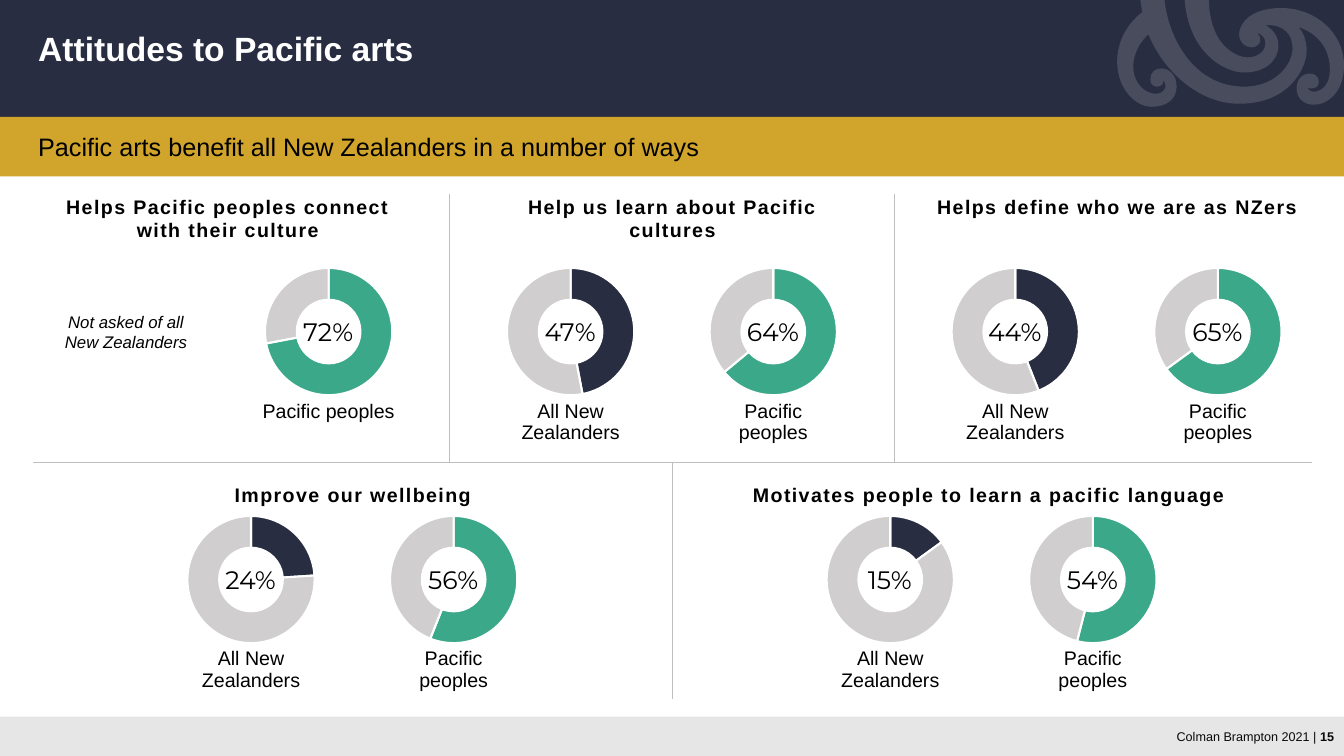
from lxml import etree
from pptx import Presentation
from pptx.chart.data import CategoryChartData
from pptx.dml.color import RGBColor
from pptx.enum.chart import XL_CHART_TYPE as ChartType
from pptx.enum.shapes import MSO_CONNECTOR as Connector, MSO_SHAPE as Shape
from pptx.enum.text import MSO_ANCHOR as Anchor, PP_ALIGN as Align
from pptx.oxml.ns import qn
from pptx.util import Inches, Pt

TITLE = "Attitudes to Pacific arts"
SUBTITLE = "Pacific arts benefit all New Zealanders in a number of ways"
NOT_ASKED = "Not asked of all\vNew Zealanders"
FOOTER = ("Colman Brampton 2021 | ", "15")
ALL, PACIFIC = "All New Zealanders", "Pacific peoples"

PANELS = [
    {"heading": "Helps Pacific peoples connect with their culture", "row": 0,
     "left": 0.33, "width": 3.86, "first": 3.26, "rings": [(PACIFIC, 72)]},
    {"heading": "Help us learn about Pacific cultures", "row": 0,
     "left": 4.74, "width": 3.86, "first": 5.66, "rings": [(ALL, 47), (PACIFIC, 64)]},
    {"heading": "Helps define who we are as NZers", "row": 0,
     "left": 9.15, "width": 3.86, "first": 10.07, "rings": [(ALL, 44), (PACIFIC, 65)]},
    {"heading": "Improve our wellbeing", "row": 1,
     "left": 1.57, "width": 3.86, "first": 2.49, "rings": [(ALL, 24), (PACIFIC, 56)]},
    {"heading": "Motivates people to learn a pacific language ", "row": 1,
     "left": 7.2, "width": 5.28, "first": 8.83, "rings": [(ALL, 15), (PACIFIC, 54)]},
]
ROWS = [{"heading": 1.88, "ring": 2.52}, {"heading": 4.74, "ring": 4.98}]
DIVIDERS = [(0.33, 4.59, 13.01, 4.59), (4.46, 1.92, 4.46, 4.59),
            (8.87, 1.92, 8.87, 4.59), (6.67, 4.59, 6.67, 6.93)]

SWIRL_START = (11.08, 0.61)
SWIRL = [
    (11.08, 0.89, 11.27, 1.06, 11.42, 1.06), (11.6, 1.06, 11.67, 0.96, 11.67, 0.86),
    (11.67, 0.74, 11.59, 0.68, 11.52, 0.68), (11.46, 0.68, 11.41, 0.71, 11.41, 0.79),
    (11.41, 0.86, 11.47, 0.86, 11.48, 0.86), (11.49, 0.86, 11.54, 0.85, 11.54, 0.8),
    (11.54, 0.8, 11.56, 0.82, 11.56, 0.85), (11.56, 0.87, 11.55, 0.93, 11.46, 0.93),
    (11.36, 0.93, 11.24, 0.83, 11.24, 0.66), (11.24, 0.47, 11.39, 0.34, 11.39, 0.34),
    (11.53, 0.69, 11.88, 1.03, 12.29, 1.03), (12.81, 1.03, 12.96, 0.65, 12.96, 0.51),
    (12.96, 0.45, 12.95, 0.35, 12.88, 0.27), (12.88, 0.27, 13.19, 0.35, 13.19, 0.69),
    (13.19, 0.88, 13.07, 0.91, 13.03, 0.91), (12.98, 0.91, 12.97, 0.87, 12.97, 0.87),
    (13, 0.89, 13.08, 0.88, 13.08, 0.82), (13.08, 0.74, 13.02, 0.73, 12.99, 0.73),
    (12.96, 0.73, 12.86, 0.75, 12.86, 0.88), (12.86, 0.99, 12.95, 1.04, 13.03, 1.04),
    (13.17, 1.04, 13.33, 0.91, 13.33, 0.65), (13.33, 0.32, 13.04, 0.08, 12.71, 0.08),
    (12.37, 0.08, 12.29, 0.26, 12.29, 0.34), (12.29, 0.42, 12.35, 0.47, 12.41, 0.47),
    (12.48, 0.47, 12.5, 0.42, 12.5, 0.4), (12.5, 0.37, 12.49, 0.34, 12.47, 0.33),
    (12.47, 0.33, 12.55, 0.34, 12.55, 0.43), (12.55, 0.52, 12.46, 0.57, 12.37, 0.57),
    (12.29, 0.57, 12, 0.48, 11.99, 0), (11.75, 0),
    (11.79, 0.52, 12.14, 0.72, 12.34, 0.72), (12.54, 0.72, 12.68, 0.61, 12.68, 0.45),
    (12.68, 0.31, 12.55, 0.25, 12.55, 0.25), (12.72, 0.24, 12.82, 0.33, 12.82, 0.48),
    (12.82, 0.64, 12.65, 0.86, 12.34, 0.86), (11.85, 0.86, 11.59, 0.39, 11.55, 0),
    (11.31, 0), (11.32, 0.07, 11.33, 0.12, 11.33, 0.12),
    (11.33, 0.12, 11.08, 0.29, 11.08, 0.61),
]

THEME = {
    "navy": "282D41", "gold": "D1A42B", "green": "3AA889", "rest": "D0CECE",
    "rule": "BFBFBF", "footer": "E6E6E6", "white": "FFFFFF", "black": "000000",
    "footer_text": "0A0A0A", "body": "Arial", "figure": "Montserrat",
    "title_size": 24, "subtitle_size": 18, "figure_size": 18, "label_size": 14,
    "note_size": 12, "chart_size": 10, "footer_size": 9,
}
RING_WIDTH, RING_HEIGHT, RING_STEP = 2.32, 1.54, 2.01
RING_SHARE = 0.82
LABEL_WIDTHS = {ALL: 1.78, PACIFIC: 1.36}

deck = Presentation()
deck.slide_width, deck.slide_height = Inches(13.33), Inches(7.5)
page = deck.slides.add_slide(deck.slide_layouts[6])


def color(name):
    return RGBColor.from_string(THEME[name])


def paint(shape, fill):
    shape.shadow.inherit = False
    shape.fill.solid()
    shape.fill.fore_color.rgb = color(fill)
    shape.line.fill.background()


def add_band(top, height, fill):
    band = page.shapes.add_shape(Shape.RECTANGLE, 0, Inches(top), deck.slide_width, Inches(height))
    paint(band, fill)


def add_text(text, left, top, width, height, size, face="body", ink="black", align=Align.LEFT,
             anchor=Anchor.TOP, wrap=True, bold=False, italic=False, leading=None, tracking=0):
    box = page.shapes.add_textbox(Inches(left), Inches(top), Inches(width), Inches(height))
    frame = box.text_frame
    frame.word_wrap, frame.vertical_anchor = wrap, anchor
    para = frame.paragraphs[0]
    para.text, para.alignment = text, align
    if leading:
        para.line_spacing = leading
    font = para.font
    font.name, font.size, font.color.rgb = THEME[face], Pt(THEME[size]), color(ink)
    font.bold, font.italic = bold, italic
    if tracking:
        para._p.pPr.find(qn("a:defRPr")).set("spc", str(tracking * 100))
    return para


def add_swirl():
    builder = page.shapes.build_freeform(*map(Inches, SWIRL_START))
    builder.add_line_segments([tuple(map(Inches, part[-2:])) for part in SWIRL], close=True)
    swirl = builder.convert_to_shape()
    paint(swirl, "white")
    properties = swirl._element.spPr
    for segment, part in zip(list(properties.iter(qn("a:lnTo"))), SWIRL):
        if len(part) == 6:
            curve = etree.Element(qn("a:cubicBezTo"))
            for x, y in zip(part[::2], part[1::2]):
                point = etree.SubElement(curve, qn("a:pt"))
                point.set("x", str(Inches(x) - swirl.left))
                point.set("y", str(Inches(y) - swirl.top))
            segment.getparent().replace(segment, curve)
    tint = properties.find(qn("a:solidFill"))[0]
    etree.SubElement(tint, qn("a:alpha")).set("val", "15000")


def add_divider(*ends):
    line = page.shapes.add_connector(Connector.STRAIGHT, *map(Inches, ends))
    line.line.color.rgb, line.line.width = color("rule"), Pt(0.5)
    etree.SubElement(line._element.spPr, qn("a:effectLst"))


def fit_plot(chart):
    plot_area = chart._chartSpace.chart.plotArea
    for old in plot_area.findall(qn("c:layout")):
        plot_area.remove(old)
    layout = etree.Element(qn("c:layout"))
    manual = etree.SubElement(layout, qn("c:manualLayout"))
    share = RING_SHARE * RING_HEIGHT / RING_WIDTH
    settings = {"layoutTarget": "inner", "xMode": "edge", "yMode": "edge",
                "x": (1 - share) / 2, "y": (1 - RING_SHARE) / 2, "w": share, "h": RING_SHARE}
    for name, value in settings.items():
        etree.SubElement(manual, qn(f"c:{name}")).set("val", str(value))
    plot_area.insert(0, layout)
    next(plot_area.iter(qn("c:holeSize"))).set("val", "75")


def add_ring(group, percent, center, top, single):
    data = CategoryChartData()
    data.categories = ["1", "2"]
    data.add_series("Series 1", (percent, 100 - percent))
    chart = page.shapes.add_chart(
        ChartType.DOUGHNUT, Inches(center - RING_WIDTH / 2), Inches(top),
        Inches(RING_WIDTH), Inches(RING_HEIGHT), data).chart
    chart.has_legend = chart.has_title = False
    chart.font.name, chart.font.size = THEME["body"], Pt(THEME["chart_size"])
    chart.font.color.rgb = color("black")
    for index, fill in enumerate(("navy" if group == ALL else "green", "rest")):
        look = chart.plots[0].series[0].points[index].format
        look.fill.solid()
        look.fill.fore_color.rgb = color(fill)
        look.line.color.rgb, look.line.width = color("white"), Pt(1.5)
    fit_plot(chart)
    width = 1.52 if single else LABEL_WIDTHS[group]
    add_text(group, center - width / 2, top + 1.41, width, 0.31 if single else 0.53, "label_size",
             align=Align.CENTER, wrap=not single, leading=0.9)
    add_text(f"{percent}%", center - 0.4, top + 0.57, 0.79, 0.4, "figure_size", "figure",
             align=Align.CENTER, anchor=Anchor.MIDDLE, wrap=False)


add_band(0, 1.18, "navy")
add_swirl()
add_band(7.11, 0.39, "footer")
add_band(1.16, 0.59, "gold")
source, number = FOOTER
footer = add_text(source, 11.57, 7.18, 1.76, 0.25, "footer_size", ink="footer_text",
                  align=Align.RIGHT, anchor=Anchor.MIDDLE, wrap=False)
span = footer.add_run()
span.text, span.font.bold = number, True
add_text(TITLE, 0.28, 0.27, 12.78, 0.46, "title_size", ink="white", bold=True, leading=0.9)
add_text(SUBTITLE, 0.28, 1.25, 12.78, 0.4, "subtitle_size")
add_text(NOT_ASKED, 0.54, 3.04, 1.42, 0.5, "note_size", align=Align.CENTER,
         anchor=Anchor.MIDDLE, wrap=False, italic=True)
for ends in DIVIDERS:
    add_divider(*ends)
for panel in PANELS:
    row = ROWS[panel["row"]]
    heading_height = 0.57 if len(panel["heading"]) > 32 and panel["row"] == 0 else 0.34
    add_text(panel["heading"], panel["left"], row["heading"], panel["width"], heading_height,
             "label_size", align=Align.CENTER, bold=True, tracking=1)
    for index, (group, percent) in enumerate(panel["rings"]):
        add_ring(group, percent, panel["first"] + index * RING_STEP, row["ring"],
                 len(panel["rings"]) == 1)

deck.save("out.pptx")
